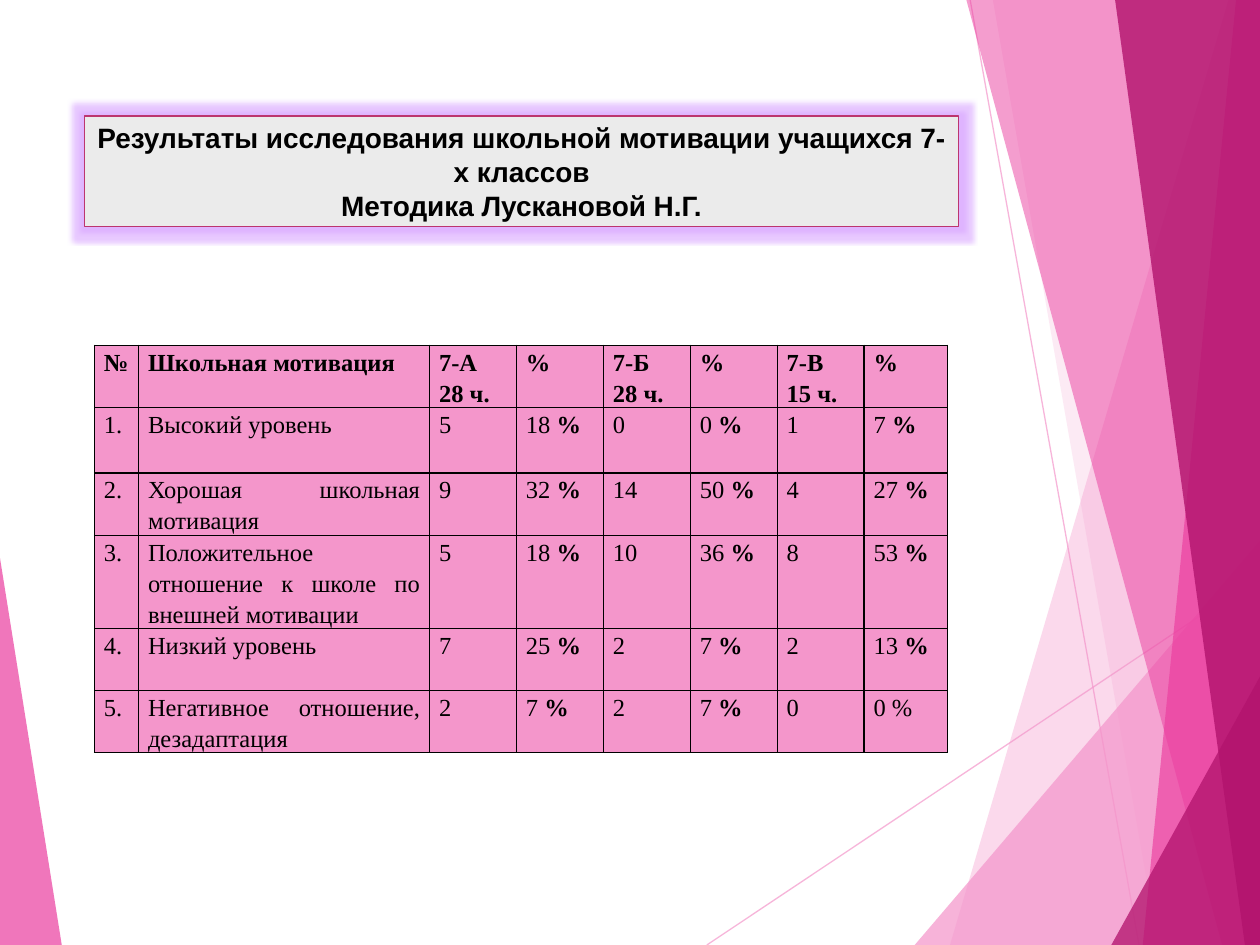
from lxml.etree import SubElement
from pptx import Presentation
from pptx.dml.color import RGBColor
from pptx.enum.shapes import MSO_CONNECTOR, MSO_SHAPE
from pptx.enum.text import MSO_ANCHOR, PP_ALIGN
from pptx.oxml.ns import qn
from pptx.util import Inches, Pt

PINK, ROSE, PLUM, BLACK = "F496CB", "EB3D9F", "B2136D", "000000"

LINES = [((5.61, 7.5), (10, 4.57)), ((7.7, 0), (9.04, 7.5))]

FACETS = [
    ([(9.75, 0), (7.54, 7.5), (10, 7.5), (10, 0)], PINK, 36),
    ([(7.88, 0), (9.19, 7.5), (10, 7.5), (10, 0)], PINK, 20),
    ([(7.26, 7.5), (10, 4.29), (10, 7.5)], PINK, 72),
    ([(7.67, 0), (9.7, 7.5), (10, 7.5), (10, 0)], ROSE, 50),
    ([(9.81, 0), (9.07, 7.5), (10, 7.5), (10, 0)], ROSE, 66),
    ([(8.85, 0), (9.88, 7.5), (10, 7.5), (10, 0)], PLUM, 80),
    ([(8.82, 7.5), (10, 5.37), (10, 7.5)], PLUM, 76),
    ([(0, 4.43), (0.49, 7.5), (0, 7.5)], ROSE, 70),
]

TITLE = ("Результаты исследования школьной мотивации учащихся 7-х классов\v"
         "Методика Лускановой Н.Г.")

COLUMNS = [0.35, 2.31] + [0.69] * 5 + [0.66]
HEIGHTS = [0.49, 0.52, 0.49, 0.74, 0.49, 0.49]
HEADER = ["№", "Школьная мотивация", "7-А\n28 ч.", "%", "7-Б\n28 ч.", "%", "7-В\n15 ч.", "%"]
LEVELS = [
    ["1.", "Высокий уровень", "5", "18 *%", "0", "0 *%", "1", "7 *%"],
    ["2.", "Хорошая школьная мотивация", "9", "32 *%", "14", "50 *%", "4", "27 *%"],
    ["3.", "Положительное отношение к школе по внешней мотивации",
     "5", "18 *%", "10", "36 *%", "8", "53 *%"],
    ["4.", "Низкий уровень", "7", "25 *%", "2", "7 *%", "2", "13 *%"],
    ["5.", "Негативное отношение, дезадаптация", "2", "7 *%", "2", "7 *%", "0", "0 %"],
]


def paint(fill, color):
    """Fill with a solid hex colour."""
    fill.solid()
    fill.fore_color.rgb = RGBColor.from_string(color)


def set_alpha(element, percent):
    """Set the opacity of every hex colour inside an element."""
    for clr in element.iter(qn("a:srgbClr")):
        SubElement(clr, qn("a:alpha"), val=str(percent * 1000))


def set_font(p, name, size, bold):
    """Set the black font of a paragraph."""
    p.font.name = name
    p.font.size = Pt(size)
    p.font.bold = bold
    p.font.color.rgb = RGBColor.from_string(BLACK)


def add_line(s, start, end):
    """Draw a thin translucent line."""
    line = s.shapes.add_connector(MSO_CONNECTOR.STRAIGHT, *map(Inches, start + end))
    line.line.width = Pt(0.75)
    paint(line.line.fill, PINK)
    spPr = line._element.spPr
    set_alpha(spPr, 70)
    SubElement(spPr, qn("a:effectLst"))


def add_facet(s, points, color, percent):
    """Draw a translucent polygon."""
    corners = [(Inches(x), Inches(y)) for x, y in points]
    fb = s.shapes.build_freeform(*corners[0])
    fb.add_line_segments(corners[1:], close=True)
    sp = fb.convert_to_shape()
    sp.shadow.inherit = False
    sp.line.fill.background()
    paint(sp.fill, color)
    set_alpha(sp._element.spPr, percent)


def add_title(s):
    """Add the glowing title box."""
    sp = s.shapes.add_shape(MSO_SHAPE.RECTANGLE, Inches(0.67), Inches(0.92),
                            Inches(6.94), Inches(0.88))
    paint(sp.fill, "EBEBEB")
    paint(sp.line.fill, "BC356F")
    sp.line.width = Pt(0.75)
    sp.shadow.inherit = False
    effects = sp._element.spPr.find(qn("a:effectLst"))
    glow = SubElement(effects, qn("a:glow"), rad=str(Inches(0.07)))
    SubElement(glow, qn("a:srgbClr"), val="D9A6FF")
    set_alpha(glow, 60)
    tf = sp.text_frame
    tf.word_wrap = True
    tf.vertical_anchor = MSO_ANCHOR.MIDDLE
    p = tf.paragraphs[0]
    p.text = TITLE
    p.alignment = PP_ALIGN.CENTER
    set_font(p, "Arial", 16, True)


def add_borders(cell):
    """Draw a black border on each side of a cell."""
    tcPr = cell._tc.get_or_add_tcPr()
    for side in ("a:lnL", "a:lnR", "a:lnT", "a:lnB"):
        ln = SubElement(tcPr, qn(side), w=str(Pt(1)))
        SubElement(SubElement(ln, qn("a:solidFill")), qn("a:srgbClr"), val=BLACK)


def fill_cell(cell, text, bold):
    """Style a cell and write its text; what follows an asterisk is bold."""
    add_borders(cell)
    paint(cell.fill, PINK)
    cell.margin_left = cell.margin_right = Pt(5.4)
    cell.margin_top = cell.margin_bottom = 0
    plain, _, strong = text.partition("*")
    tf = cell.text_frame
    tf.text = plain
    for p in tf.paragraphs:
        p.alignment = PP_ALIGN.JUSTIFY
        p.line_spacing = 1.15
        set_font(p, "Times New Roman", 14, bold)
    if strong:
        r = tf.paragraphs[0].add_run()
        r.text = strong
        r.font.bold = True


def add_results(s):
    """Add the table of motivation levels."""
    rows = [HEADER] + LEVELS
    table = s.shapes.add_table(len(rows), len(COLUMNS), Inches(0.75), Inches(2.74),
                               Inches(sum(COLUMNS)), Inches(sum(HEIGHTS))).table
    table.first_row = table.horz_banding = False
    for column, width in zip(table.columns, COLUMNS):
        column.width = Inches(width)
    for i, (row, height) in enumerate(zip(table.rows, HEIGHTS)):
        row.height = Inches(height)
        for cell, text in zip(row.cells, rows[i]):
            fill_cell(cell, text, i == 0)


def main():
    """Build and save the slide."""
    prs = Presentation()
    prs.slide_width, prs.slide_height = Inches(10), Inches(7.5)
    s = prs.slides.add_slide(prs.slide_layouts[6])
    for start, end in LINES:
        add_line(s, start, end)
    for points, color, percent in FACETS:
        add_facet(s, points, color, percent)
    add_title(s)
    add_results(s)
    prs.save("out.pptx")


if __name__ == "__main__":
    main()
